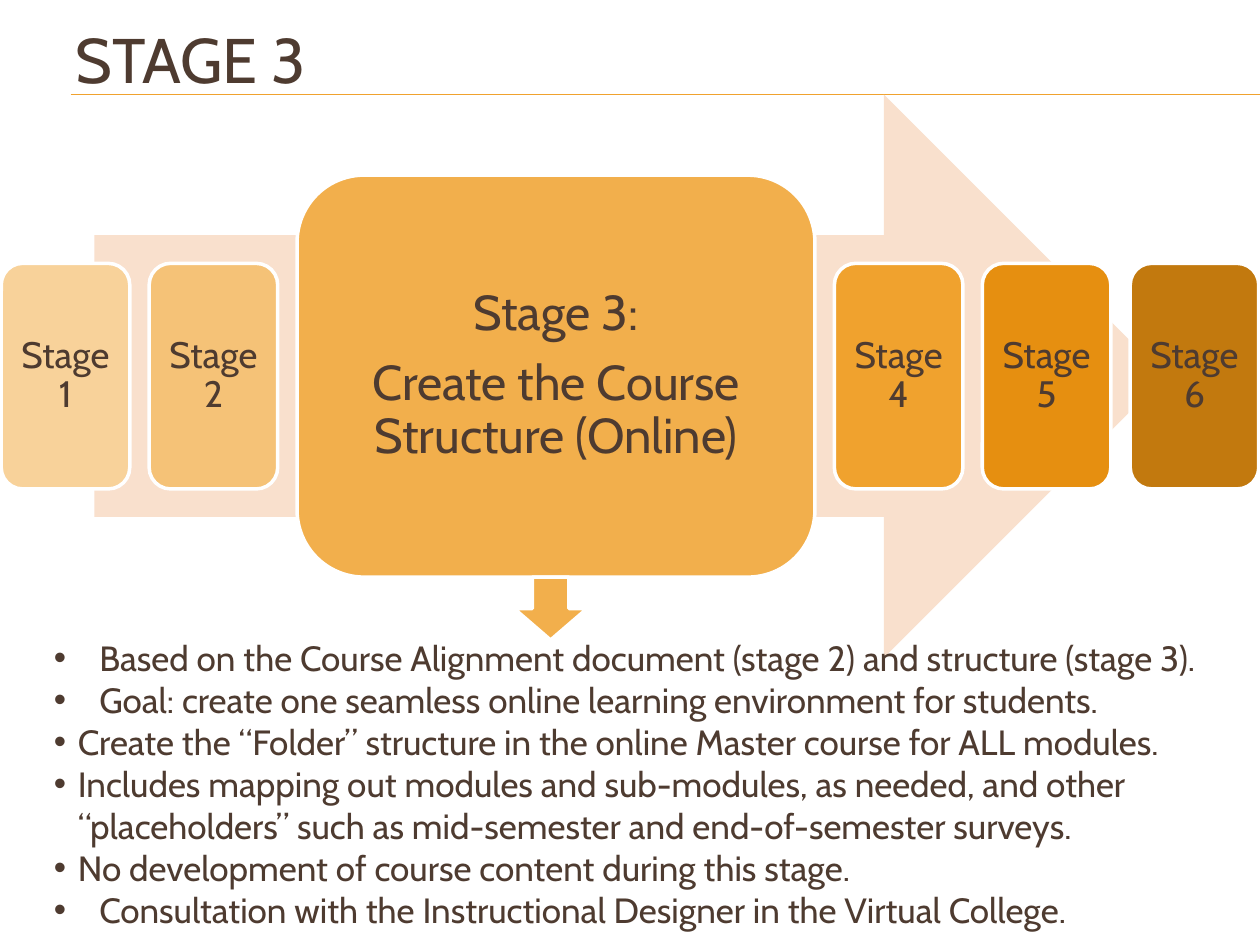
"""Build the Stage 3 slide of a six-stage course design process."""
from lxml.etree import SubElement
from pptx import Presentation
from pptx.dml.color import RGBColor
from pptx.enum.shapes import MSO_CONNECTOR, MSO_SHAPE
from pptx.enum.text import MSO_ANCHOR, PP_ALIGN
from pptx.oxml.ns import qn
from pptx.util import Inches, Pt

BROWN = RGBColor(0x4E, 0x3B, 0x30)
WHITE = RGBColor(0xFF, 0xFF, 0xFF)
GOLD = RGBColor(0xF0, 0xA2, 0x2E)
PEACH = RGBColor(0xF9, 0xE0, 0xCD)
AMBER = RGBColor(0xF2, 0xAF, 0x4C)

CURRENT = "Stage 3:\nCreate the Course Structure (Online)"
STAGES = [
    ("Stage\v1", RGBColor(0xF8, 0xD2, 0x9A)),
    ("Stage\v2", RGBColor(0xF5, 0xC2, 0x77)),
    (CURRENT, AMBER),
    ("Stage\v4", GOLD),
    ("Stage\v5", RGBColor(0xE6, 0x8F, 0x10)),
    ("Stage\v6", RGBColor(0xC2, 0x79, 0x0E)),
]
STAGE_SIZE = (1.02, 1.79)
CURRENT_SIZE = (4.11, 3.19)
MIDDLE = 2.985
MARGIN = 0.01

WIDE, NARROW = 0.36, 0.19
NOTES = [
    ("Based on the Course Alignment document (stage 2) and structure (stage 3).", WIDE),
    ("Goal: create one seamless online learning environment for students.", WIDE),
    ("Create the “Folder” structure in the online Master course for ALL modules.", NARROW),
    ("Includes mapping out modules and sub-modules, as needed, and other "
     "“placeholders” such as mid-semester and end-of-semester surveys.", NARROW),
    ("No development of course content during this stage.", NARROW),
    ("Consultation with the Instructional Designer in the Virtual College.", WIDE),
]


def set_font(paragraph, size):
    paragraph.font.name = "Cabin"
    paragraph.font.size = Pt(size)
    paragraph.font.color.rgb = BROWN


def add_block(slide, preset, left, top, width, height, fill, outlined=True):
    block = slide.shapes.add_shape(
        preset, Inches(left), Inches(top), Inches(width), Inches(height))
    block.shadow.inherit = False
    block.fill.solid()
    block.fill.fore_color.rgb = fill
    if outlined:
        block.line.color.rgb = WHITE
        block.line.width = Pt(2)
    else:
        block.line.fill.background()
    return block


def add_stage(slide, label, fill, left, width, height, size, inset):
    stage = add_block(slide, MSO_SHAPE.ROUNDED_RECTANGLE,
                      left, MIDDLE - height / 2, width, height, fill)
    frame = stage.text_frame
    frame.word_wrap = True
    frame.vertical_anchor = MSO_ANCHOR.MIDDLE
    frame.margin_left = frame.margin_right = Inches(inset)
    frame.margin_top = frame.margin_bottom = Inches(inset)
    frame.text = label
    for paragraph in frame.paragraphs:
        paragraph.alignment = PP_ALIGN.CENTER
        paragraph.line_spacing = 0.9
        paragraph.space_after = Pt(0.35 * size)
        set_font(paragraph, size)


def add_stages(slide):
    used = 2 * MARGIN + CURRENT_SIZE[0] + (len(STAGES) - 1) * STAGE_SIZE[0]
    gap = (10 - used) / (len(STAGES) - 1)
    left = MARGIN
    for label, fill in STAGES:
        is_current = label == CURRENT
        width, height = CURRENT_SIZE if is_current else STAGE_SIZE
        size, inset = (28, 0.12) if is_current else (21, 0.09)
        add_stage(slide, label, fill, left, width, height, size, inset)
        left += width + gap


def add_text_box(slide, left, top, width, height):
    box = slide.shapes.add_textbox(
        Inches(left), Inches(top), Inches(width), Inches(height))
    box.text_frame.word_wrap = True
    return box.text_frame


def add_title(slide):
    frame = add_text_box(slide, 0.5, 0, 9.5, 0.92)
    frame.vertical_anchor = MSO_ANCHOR.MIDDLE
    frame.text = "STAGE 3"
    set_font(frame.paragraphs[0], 36)


def add_title_rule(slide):
    rule = slide.shapes.add_connector(
        MSO_CONNECTOR.STRAIGHT, Inches(0.56), Inches(0.75), Inches(10), Inches(0.75))
    rule.line.color.rgb = GOLD
    rule.line.width = Pt(0.75)
    SubElement(rule.line._get_or_add_ln().getparent(), qn("a:effectLst"))


def add_bullet(paragraph, indent):
    properties = paragraph._p.get_or_add_pPr()
    properties.set("marL", str(Inches(indent)))
    properties.set("indent", str(-Inches(indent)))
    SubElement(properties, qn("a:buFont"), typeface="Arial")
    SubElement(properties, qn("a:buChar"), char="•")


def add_notes(slide):
    frame = add_text_box(slide, 0.33, 5, 9.33, 2.46)
    frame.text = "\n".join(note for note, _ in NOTES)
    for paragraph, (_, indent) in zip(frame.paragraphs, NOTES):
        add_bullet(paragraph, indent)
        set_font(paragraph, 20)


def main():
    presentation = Presentation()
    presentation.slide_width = Inches(10)
    presentation.slide_height = Inches(7.5)
    slide = presentation.slides.add_slide(presentation.slide_layouts[6])
    add_title_rule(slide)
    add_title(slide)
    add_block(slide, MSO_SHAPE.RIGHT_ARROW, 0.75, 0.75, 8.5, 4.47, PEACH, outlined=False)
    add_stages(slide)
    add_notes(slide)
    add_block(slide, MSO_SHAPE.DOWN_ARROW, 4.08, 4.58, 0.58, 0.5, AMBER)
    presentation.save("out.pptx")


if __name__ == "__main__":
    main()
